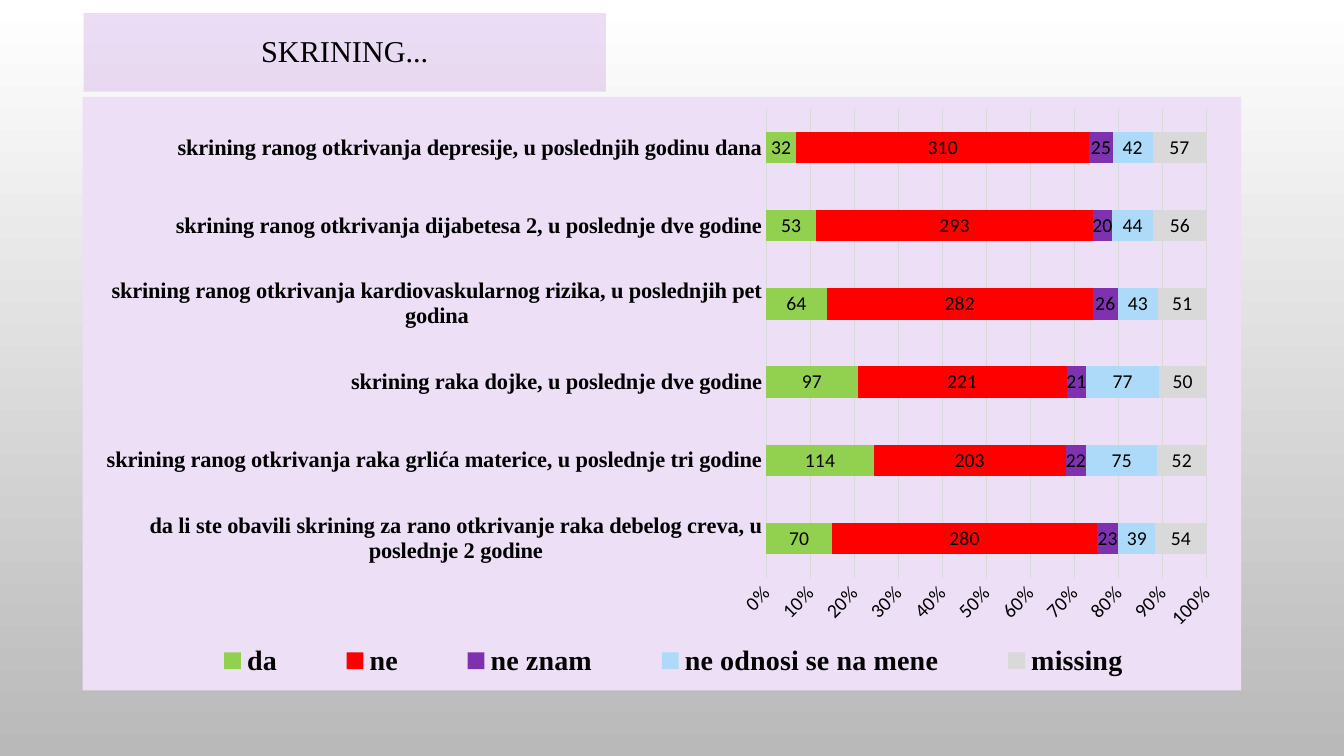
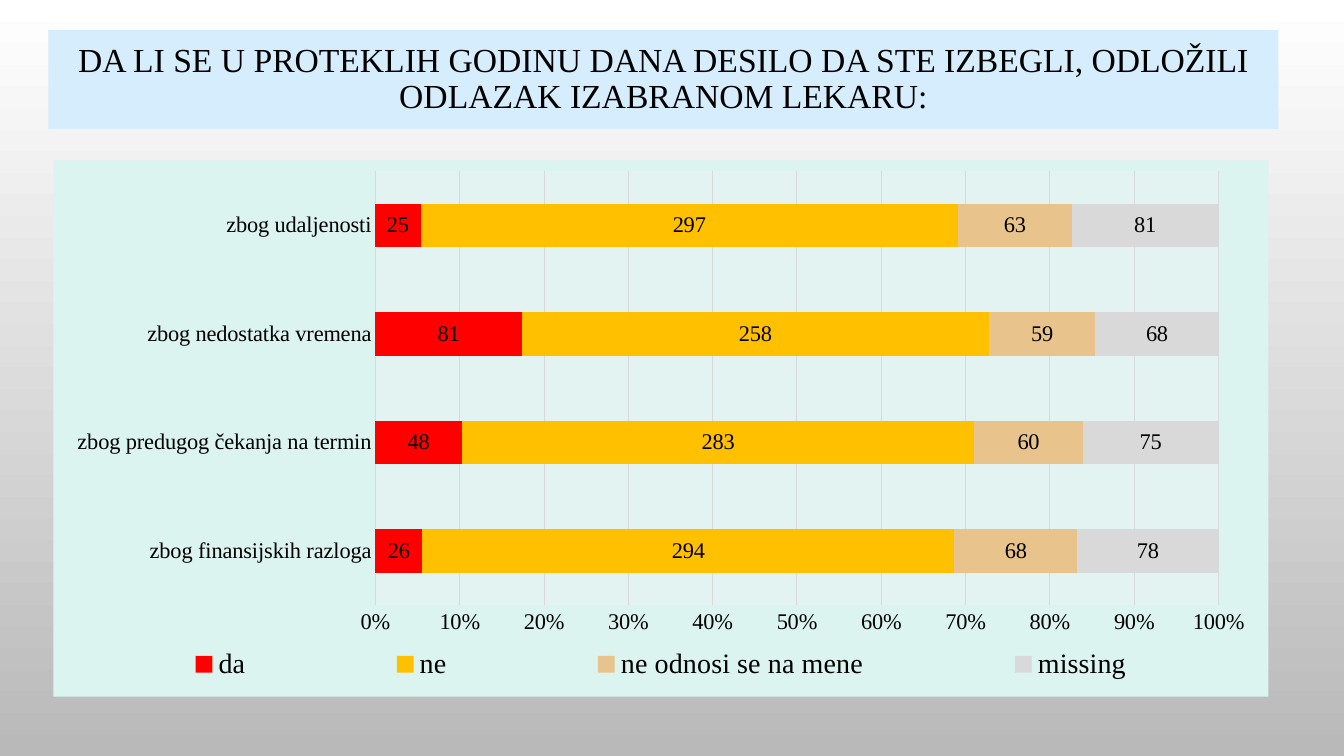
"""Build two survey slides, each with a title band and a stacked percentage chart."""
from lxml.etree import SubElement
from pptx import Presentation
from pptx.chart.data import CategoryChartData
from pptx.dml.color import RGBColor
from pptx.enum.chart import XL_CHART_TYPE, XL_LABEL_POSITION, XL_LEGEND_POSITION, XL_TICK_MARK
from pptx.enum.text import MSO_ANCHOR, MSO_AUTO_SIZE, PP_ALIGN
from pptx.oxml import parse_xml
from pptx.oxml.ns import nsdecls, qn
from pptx.util import Inches, Pt

WHITE = RGBColor(0xFF, 0xFF, 0xFF)
SILVER = RGBColor(0xB9, 0xB9, 0xB9)
BLACK = RGBColor(0x00, 0x00, 0x00)
GRID = RGBColor(0xD9, 0xD9, 0xD9)
RED = RGBColor(0xFF, 0x00, 0x00)
GREEN = RGBColor(0x92, 0xD0, 0x50)
PURPLE = RGBColor(0x7E, 0x32, 0xB0)
SKY = RGBColor(0xAC, 0xDA, 0xF8)
AMBER = RGBColor(0xFF, 0xC0, 0x00)
SAND = RGBColor(0xE8, 0xC4, 0x8C)
LILAC = RGBColor(0xC8, 0x9E, 0xE3)
PALE_LILAC = RGBColor(0xED, 0xDF, 0xF6)
PALE_BLUE = RGBColor(0xD5, 0xED, 0xFC)
MINT = RGBColor(0xDB, 0xF4, 0xEF)
MIST = RGBColor(0xEE, 0xF2, 0xF7)
SERIF, SANS = "Times New Roman", "Calibri"

SLIDES = [
    {
        "title": "SKRINING...",
        "title_box": (0.83, 0.13, 5.18, 0.78),
        "title_size": 21.6,
        "title_fill": (LILAC, 34),
        "chart_box": (0.82, 0.96, 11.49, 5.89),
        "chart_fill": (PALE_LILAC, 100),
        "plot_fill": None,
        "plot_share": (0.59, 0.02, 0.38, 0.79),
        "legend_share": (0.07, 0.91, 0.88, 0.08),
        "value_font": (SANS, 14),
        "bold": True,
        "value_angle": -45,
        "categories": [
            "da li ste obavili skrining za rano otkrivanje raka debelog creva, u poslednje 2 godine",
            "skrining ranog otkrivanja raka grlića materice, u poslednje tri godine",
            "skrining raka dojke, u poslednje dve godine",
            "skrining ranog otkrivanja kardiovaskularnog rizika, u poslednjih pet godina",
            "skrining ranog otkrivanja dijabetesa 2, u poslednje dve godine",
            "skrining ranog otkrivanja depresije, u poslednjih godinu dana",
        ],
        "series": [
            ("da", GREEN, (70, 114, 97, 64, 53, 32)),
            ("ne", RED, (280, 203, 221, 282, 293, 310)),
            ("ne znam", PURPLE, (23, 22, 21, 26, 20, 25)),
            ("ne odnosi se na mene", SKY, (39, 75, 77, 43, 44, 42)),
            ("missing", GRID, (54, 52, 50, 51, 56, 57)),
        ],
    },
    {
        "title": "DA LI SE U PROTEKLIH GODINU DANA DESILO DA STE IZBEGLI, "
                 "ODLOŽILI ODLAZAK IZABRANOM LEKARU:",
        "title_box": (0.48, 0.3, 12.2, 0.98),
        "title_size": 24,
        "title_fill": (PALE_BLUE, 100),
        "chart_box": (0.53, 1.59, 12.05, 5.32),
        "chart_fill": (MINT, 100),
        "plot_fill": (MIST, 39),
        "plot_share": (0.265, 0.02, 0.694, 0.81),
        "legend_share": (0, 0.9, 1, 0.08),
        "value_font": (SERIF, 16),
        "bold": False,
        "value_angle": 0,
        "categories": [
            "zbog finansijskih razloga",
            "zbog predugog čekanja na termin",
            "zbog nedostatka vremena",
            "zbog udaljenosti",
        ],
        "series": [
            ("da", RED, (26, 48, 81, 25)),
            ("ne", AMBER, (294, 283, 258, 297)),
            ("ne odnosi se na mene", SAND, (68, 60, 59, 63)),
            ("missing", GRID, (78, 75, 68, 81)),
        ],
    },
]


def set_attributes(target, **values):
    for name, value in values.items():
        setattr(target, name, value)


def style_font(font, name, size, bold=False):
    set_attributes(font, name=name, size=Pt(size), bold=bold)
    font.color.rgb = BLACK


def style_line(line, color):
    line.width = Pt(0.75)
    line.color.rgb = color


def area_properties(fill):
    color, opacity = fill
    return parse_xml(
        f'<c:spPr {nsdecls("c", "a")}><a:solidFill><a:srgbClr val="{color}">'
        f'<a:alpha val="{opacity * 1000}"/></a:srgbClr></a:solidFill>'
        '<a:ln><a:noFill/></a:ln></c:spPr>')


def place_by_share(element, index, share, target=""):
    for old in element.findall(qn("c:layout")):
        element.remove(old)
    layout = parse_xml(f'<c:layout {nsdecls("c")}><c:manualLayout/></c:layout>')
    settings = [("layoutTarget", target)] if target else []
    settings += [("xMode", "edge"), ("yMode", "edge"), *zip("xywh", share)]
    for tag, value in settings:
        SubElement(layout[0], qn(f"c:{tag}")).set("val", str(value))
    element.insert(index, layout)


def format_title(title, content):
    set_attributes(title, **dict(zip(("left", "top", "width", "height"),
                                     map(Inches, content["title_box"]))))
    color, opacity = content["title_fill"]
    title.fill.solid()
    title.fill.fore_color.rgb = color
    if opacity < 100:
        color_element = title.element.spPr.find(".//" + qn("a:srgbClr"))
        SubElement(color_element, qn("a:alpha")).set("val", str(opacity * 1000))
    frame = title.text_frame
    frame.text = content["title"]
    set_attributes(frame, word_wrap=True, auto_size=MSO_AUTO_SIZE.NONE,
                   vertical_anchor=MSO_ANCHOR.MIDDLE)
    paragraph = frame.paragraphs[0]
    set_attributes(paragraph, alignment=PP_ALIGN.CENTER, line_spacing=0.9)
    style_font(paragraph.runs[0].font, SERIF, content["title_size"])


def format_axes(chart, content):
    category, value = chart.category_axis, chart.value_axis
    for axis in (category, value):
        set_attributes(axis, major_tick_mark=XL_TICK_MARK.NONE, minor_tick_mark=XL_TICK_MARK.NONE)
    style_font(category.tick_labels.font, SERIF, 16, content["bold"])
    style_line(category.format.line, GRID)
    set_attributes(value, has_major_gridlines=True, major_unit=0.1)
    style_line(value.major_gridlines.format.line, GRID)
    value.format.line.fill.background()
    set_attributes(value.tick_labels, number_format="0%", number_format_is_linked=False)
    style_font(value.tick_labels.font, *content["value_font"])
    body = value._element.find(".//" + qn("a:bodyPr"))
    body.set("rot", str(content["value_angle"] * 60000))
    body.set("vert", "horz")


def add_survey_chart(slide, content):
    data = CategoryChartData()
    data.categories = content["categories"]
    for name, color, values in content["series"]:
        data.add_series(name, values)
    chart = slide.shapes.add_chart(XL_CHART_TYPE.BAR_STACKED_100,
                                   *map(Inches, content["chart_box"]), data).chart
    set_attributes(chart, has_title=False, has_legend=True)
    style_font(chart.font, *content["value_font"])
    plot = chart.plots[0]
    set_attributes(plot, gap_width=150, overlap=100, vary_by_categories=False, has_data_labels=True)
    set_attributes(plot.data_labels, show_value=True, position=XL_LABEL_POSITION.CENTER)
    style_font(plot.data_labels.font, *content["value_font"])
    for series, (name, color, values) in zip(plot.series, content["series"]):
        series.format.fill.solid()
        series.format.fill.fore_color.rgb = color
    format_axes(chart, content)
    set_attributes(chart.legend, position=XL_LEGEND_POSITION.BOTTOM, include_in_layout=False)
    style_font(chart.legend.font, SERIF, 20, content["bold"])

    chart_element = chart.element.find(qn("c:chart"))
    chart_element.addnext(area_properties(content["chart_fill"]))
    plot_area = chart_element.find(qn("c:plotArea"))
    place_by_share(plot_area, 0, content["plot_share"], "inner")
    place_by_share(chart_element.find(qn("c:legend")), 1, content["legend_share"])
    if content["plot_fill"]:
        plot_area.append(area_properties(content["plot_fill"]))


def main():
    presentation = Presentation()
    set_attributes(presentation, slide_width=Inches(13.33), slide_height=Inches(7.5))
    background = presentation.slide_master.background.fill
    background.gradient()
    background.gradient_angle = 270
    for stop, color in zip(background.gradient_stops, (WHITE, SILVER)):
        stop.color.rgb = color
    for content in SLIDES:
        slide = presentation.slides.add_slide(presentation.slide_layouts[5])
        format_title(slide.shapes.title, content)
        add_survey_chart(slide, content)
    presentation.save("out.pptx")


if __name__ == "__main__":
    main()
